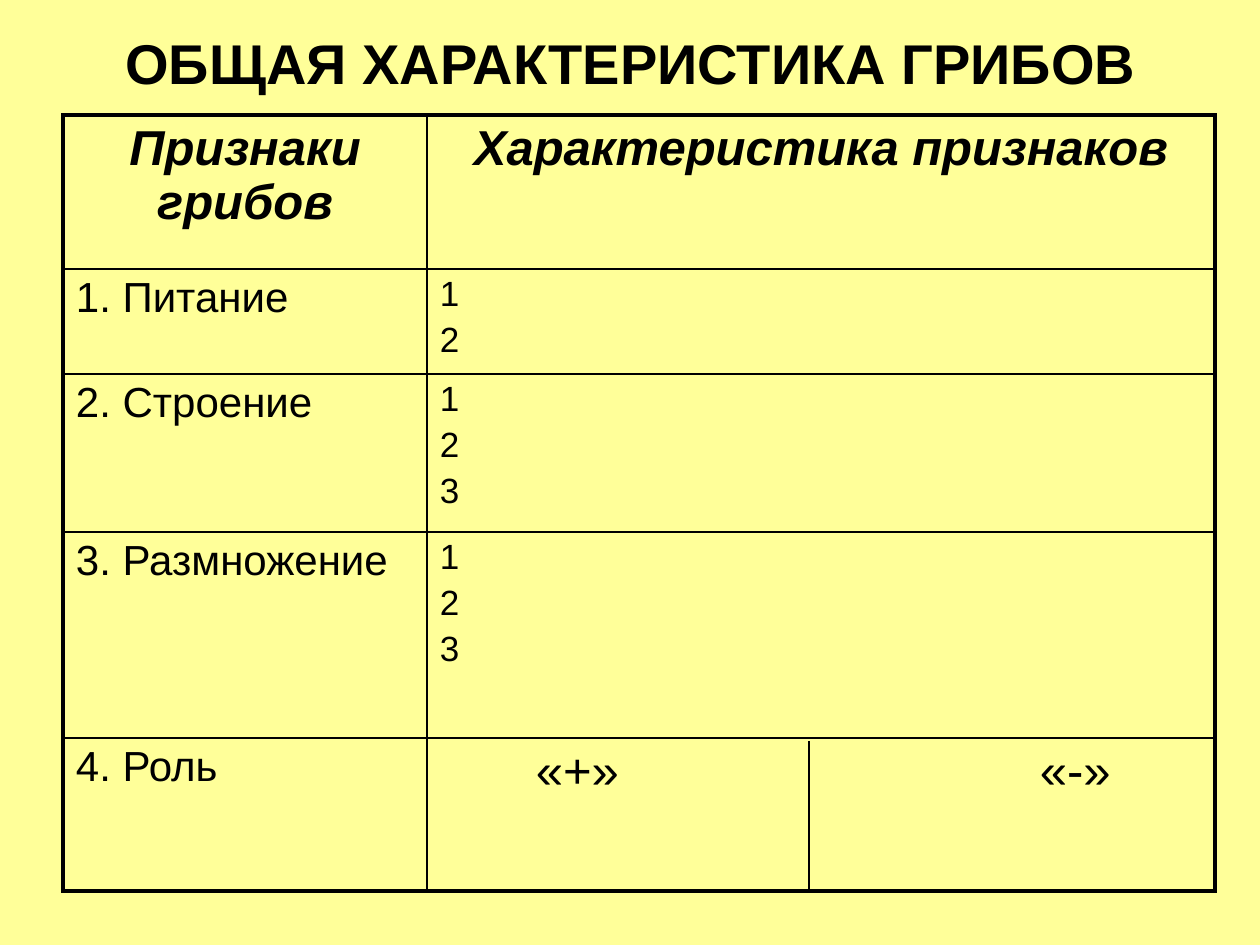
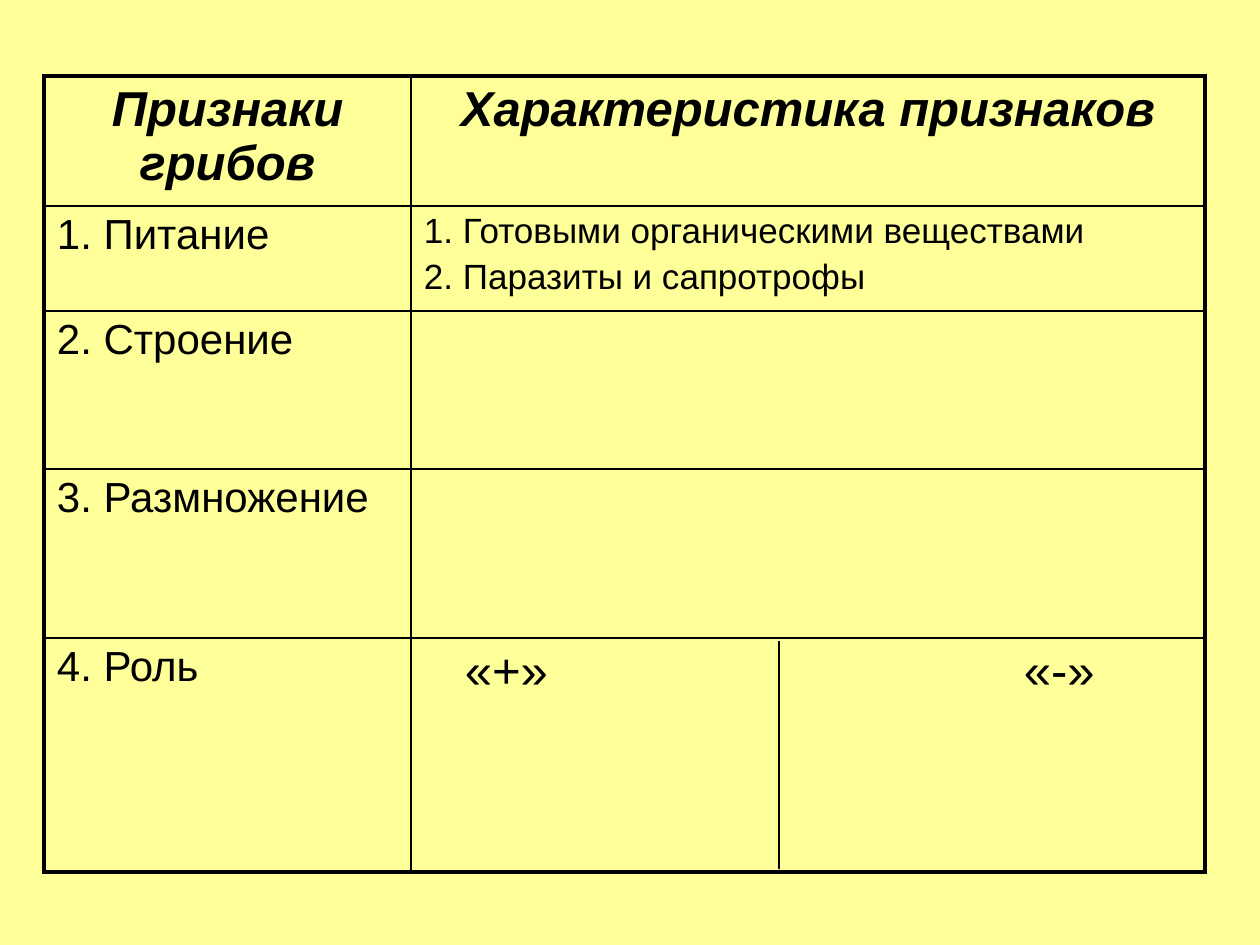
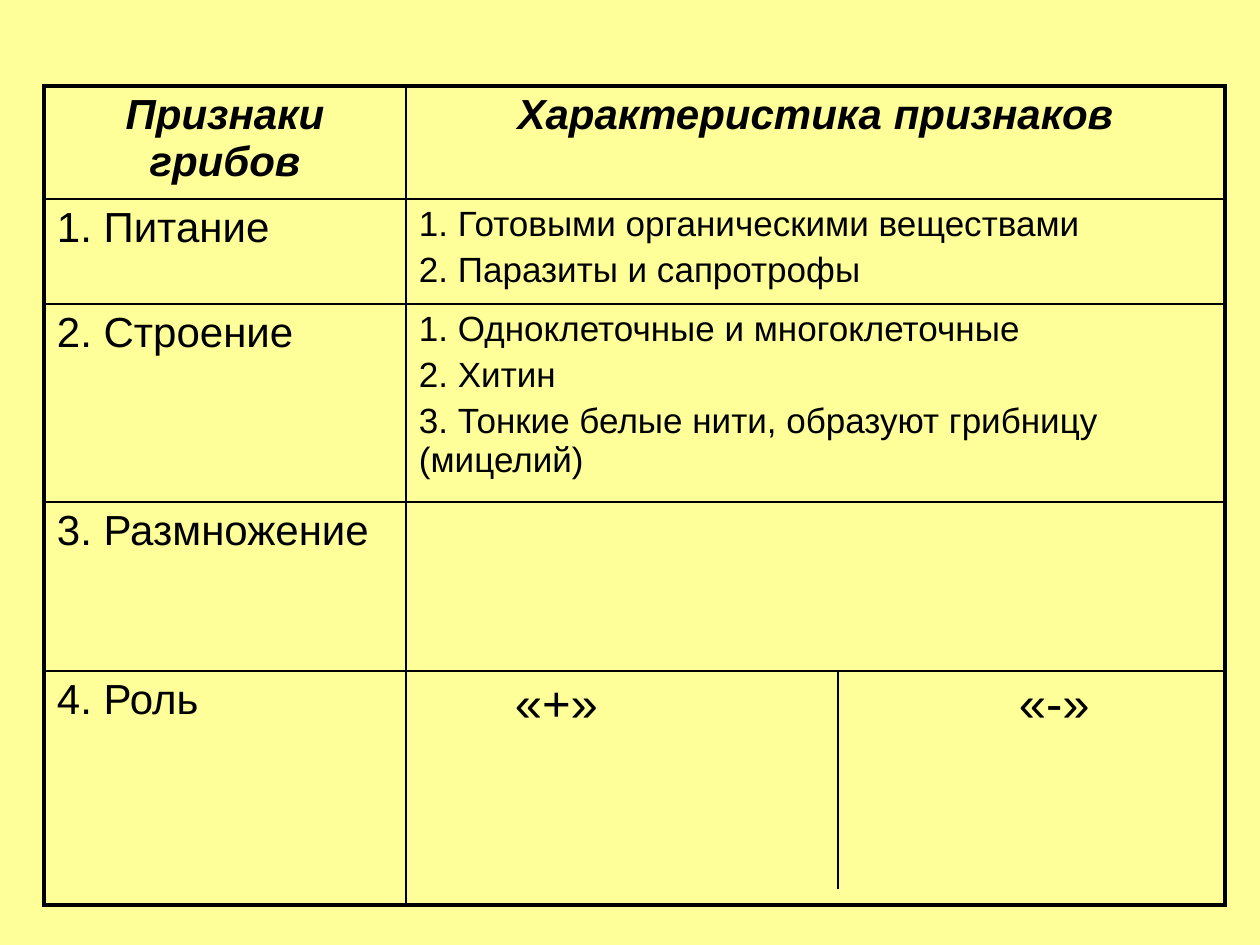
from lxml import etree
from pptx import Presentation
from pptx.dml.color import RGBColor
from pptx.enum.shapes import MSO_CONNECTOR
from pptx.enum.text import MSO_ANCHOR, PP_ALIGN
from pptx.oxml.ns import qn
from pptx.util import Emu, Pt

STRAIGHT = MSO_CONNECTOR.STRAIGHT
MIDDLE = MSO_ANCHOR.MIDDLE
LEFT, CENTER = PP_ALIGN.LEFT, PP_ALIGN.CENTER

EMU_PER_PX = 914400 // 126
BACKGROUND = "FFFF99"
INK = "000000"
FONT = "Arial"
FRAME_WIDTH, GRID_WIDTH, DIVIDER_WIDTH = 2.25, 1, 0.75
INSET_X, INSET_Y = 13, 6
MINUS_X = 600

TITLE_FORMAT = {"size": Pt(32), "bold": True}
FEATURE_FORMAT = {"size": Pt(24)}
DETAIL_FORMAT = {"size": Pt(20)}
ROLE_FORMAT = {"size": Pt(28)}

HEADINGS = ["Признаки грибов", "Характеристика признаков"]
FEATURES = ["1. Питание", "2. Строение", "3. Размножение", "4. Роль"]
ROLE_SIGNS = "«+»\t«-»"
FEEDING = ["1. Готовыми органическими веществами", "2. Паразиты и сапротрофы"]
STRUCTURE = [
    "1. Одноклеточные и многоклеточные",
    "2. Хитин",
    "3. Тонкие белые нити, образуют грибницу (мицелий)",
]

STAGES = [
    {
        "title": "ОБЩАЯ ХАРАКТЕРИСТИКА ГРИБОВ",
        "corner": (63, 115),
        "columns": [364, 788],
        "rows": [154, 105, 158, 206, 153],
        "heading_size": 28,
        "details": [["1", "2"], ["1", "2", "3"], ["1", "2", "3"]],
        "plus_x": 96,
        "divider": (809, 741, 889),
    },
    {
        "corner": (44, 76),
        "columns": [367, 794],
        "rows": [130, 105, 158, 169, 234],
        "heading_size": 28,
        "details": [FEEDING, [], []],
        "plus_x": 41,
        "divider": (779, 641, 869),
    },
    {
        "corner": (44, 86),
        "columns": [362, 819],
        "rows": [113, 105, 198, 169, 234],
        "heading_size": 24,
        "details": [FEEDING, STRUCTURE, []],
        "plus_x": 96,
        "divider": (838, 670, 889),
    },
]


def px(length):
    return Emu(length * EMU_PER_PX)


def color(value):
    return RGBColor.from_string(value)


def write(paragraph, text, formats, align=LEFT):
    paragraph.alignment = align
    run = paragraph.add_run()
    run.text = text
    run.font.color.rgb = color(INK)
    for attribute, value in {"name": FONT, **formats}.items():
        setattr(run.font, attribute, value)


def space_before(paragraph, percent):
    properties = paragraph._p.get_or_add_pPr()
    spacing = etree.SubElement(properties, qn("a:spcBef"))
    etree.SubElement(spacing, qn("a:spcPct"), val=str(percent * 1000))


def add_tab(paragraph, position):
    properties = paragraph._p.get_or_add_pPr()
    tabs = etree.SubElement(properties, qn("a:tabLst"))
    etree.SubElement(tabs, qn("a:tab"), pos=str(px(position)), algn="l")


def add_borders(cell, widths):
    properties = cell._tc.get_or_add_tcPr()
    for side, width in widths.items():
        border = etree.SubElement(properties, qn(f"a:ln{side}"), w=str(Pt(width)))
        fill = etree.SubElement(border, qn("a:solidFill"))
        etree.SubElement(fill, qn("a:srgbClr"), val=INK)


def fill_cell(cell, lines, formats, align=LEFT):
    frame = cell.text_frame
    for index, line in enumerate(lines):
        paragraph = frame.add_paragraph() if index else frame.paragraphs[0]
        write(paragraph, line, formats, align)
        space_before(paragraph, 20)


def add_title(slide, text):
    frame = slide.shapes.add_textbox(px(64), px(0), px(1134), px(125)).text_frame
    frame.word_wrap = True
    frame.vertical_anchor = MIDDLE
    write(frame.paragraphs[0], text, TITLE_FORMAT, CENTER)


def style_grid(table):
    last_row, last_column = len(table.rows) - 1, len(table.columns) - 1
    for row_index, row in enumerate(table.rows):
        for column_index, cell in enumerate(row.cells):
            on_frame = {
                "L": column_index == 0,
                "R": column_index == last_column,
                "T": row_index == 0,
                "B": row_index == last_row,
            }
            add_borders(cell, {side: FRAME_WIDTH if outer else GRID_WIDTH
                               for side, outer in on_frame.items()})
            cell.fill.background()
            cell.margin_left = cell.margin_right = px(INSET_X)
            cell.margin_top = cell.margin_bottom = px(INSET_Y)


def add_feature_table(slide, stage):
    columns, rows = stage["columns"], stage["rows"]
    left, top = stage["corner"]
    table = slide.shapes.add_table(
        len(rows), len(columns), px(left), px(top), px(sum(columns)), px(sum(rows))
    ).table
    table.first_row = table.horz_banding = False
    for column, width in zip(table.columns, columns):
        column.width = px(width)
    for row, height in zip(table.rows, rows):
        row.height = px(height)
    style_grid(table)

    heading_format = {"size": Pt(stage["heading_size"]), "bold": True, "italic": True}
    for index, heading in enumerate(HEADINGS):
        fill_cell(table.cell(0, index), [heading], heading_format, CENTER)
    for index, feature in enumerate(FEATURES, 1):
        fill_cell(table.cell(index, 0), [feature], FEATURE_FORMAT)
    for index, details in enumerate(stage["details"], 1):
        fill_cell(table.cell(index, 1), details, DETAIL_FORMAT)

    role = table.cell(len(FEATURES), 1)
    role.margin_left = px(INSET_X + stage["plus_x"])
    fill_cell(role, [ROLE_SIGNS], ROLE_FORMAT)
    add_tab(role.text_frame.paragraphs[0], MINUS_X - stage["plus_x"])


def add_role_divider(slide, x, top, bottom):
    divider = slide.shapes.add_connector(STRAIGHT, px(x), px(top), px(x), px(bottom))
    divider.line.color.rgb = color(INK)
    divider.line.width = Pt(DIVIDER_WIDTH)
    etree.SubElement(divider._element.spPr, qn("a:effectLst"))


def main():
    deck = Presentation()
    deck.slide_width, deck.slide_height = px(1260), px(945)
    background = deck.slide_master.background.fill
    background.solid()
    background.fore_color.rgb = color(BACKGROUND)
    blank = deck.slide_layouts[6]
    for stage in STAGES:
        slide = deck.slides.add_slide(blank)
        if "title" in stage:
            add_title(slide, stage["title"])
        add_feature_table(slide, stage)
        add_role_divider(slide, *stage["divider"])
    deck.save("out.pptx")


if __name__ == "__main__":
    main()
